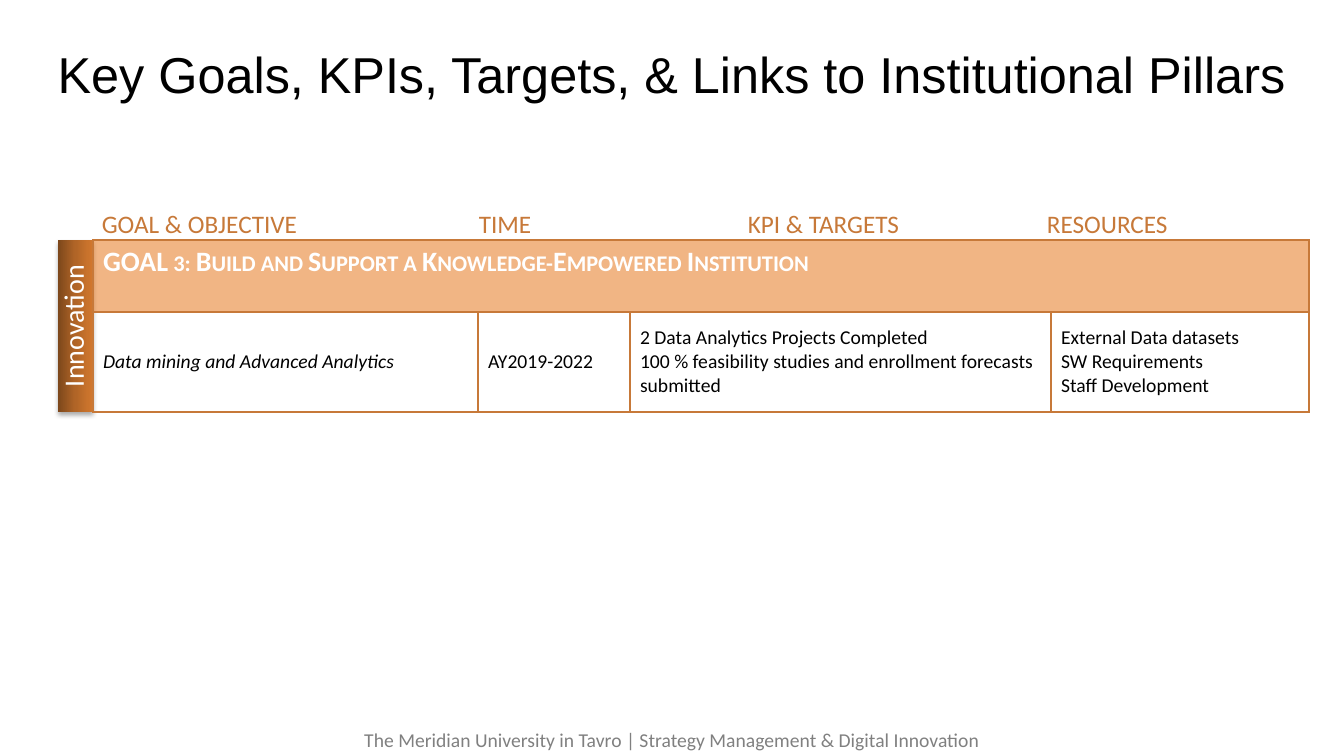
import pptx
import pptx.util
import pptx.dml.color
import pptx.enum.shapes
import pptx.enum.text
import pptx.oxml
import pptx.oxml.ns
from lxml import etree

RGB = pptx.dml.color.RGBColor
ALIGN = pptx.enum.text.PP_ALIGN
ANCHOR = pptx.enum.text.MSO_ANCHOR
Pt = pptx.util.Pt
qn = pptx.oxml.ns.qn

BLACK = RGB(0x00, 0x00, 0x00)
WHITE = RGB(0xFF, 0xFF, 0xFF)
GREY = RGB(0x80, 0x80, 0x80)
COPPER = RGB(0xC7, 0x79, 0x39)
ORANGE = RGB(0xE4, 0x6C, 0x0A)
PILLAR_STOPS = [(0, RGB(0x7C, 0x47, 0x1B)), (50, RGB(0xB1, 0x65, 0x27)),
                (100, RGB(0xD2, 0x78, 0x2E))]

TITLE = "Key Goals, KPIs, Targets, & Links to Institutional Pillars"
FOOTER = "The Meridian University in Tavro | Strategy Management & Digital Innovation"
PILLAR = "Innovation"
# heading and its distance from the first one, in px
HEADINGS = [("GOAL & OBJECTIVE", 0), ("TIME", 377),
            ("KPI & TARGETS", 646), ("RESOURCES", 945)]
GOAL = "GOAL 3: Build and Support a Knowledge-Empowered Institution"
OBJECTIVE = [
    ["Data mining and Advanced Analytics"],
    ["AY2019-2022"],
    ["2 Data Analytics Projects Completed",
     "100 % feasibility studies and enrollment forecasts submitted"],
    ["External Data datasets", "SW Requirements", "Staff Development"],
]

PX = 914400 / 100.8
SLIDE_W, SLIDE_H = 1344, 756
TABLE_LEFT, TABLE_TOP = 93, 240
COLUMNS = [385, 152, 421, 258]
ROWS = [72, 100]
PILLAR_W = 35


def px(length):
    return pptx.util.Emu(round(length * PX))


def box(*lengths):
    return [px(length) for length in lengths]


def write(frame, lines, size, colour, font="Calibri", align=ALIGN.LEFT,
          spacing=None, **style):
    frame.text = "\n".join(lines)
    for paragraph in frame.paragraphs:
        for name, value in {"alignment": align, "line_spacing": spacing}.items():
            setattr(paragraph, name, value)
        text_font = paragraph.runs[0].font
        for name, value in {"size": Pt(size), "name": font, **style}.items():
            setattr(text_font, name, value)
        text_font.color.rgb = colour


def add_text(slide, place, lines, *args, frame_format=None, **style):
    frame = slide.shapes.add_textbox(*box(*place)).text_frame
    for name, value in {"word_wrap": True, **(frame_format or {})}.items():
        setattr(frame, name, value)
    write(frame, lines, *args, **style)
    return frame


def add_headings(slide):
    line = "\t".join(heading for heading, _ in HEADINGS)
    frame = add_text(slide, (92, 203, 1217, 40), [line], 18, COPPER)
    tabs = etree.SubElement(frame.paragraphs[0]._p.get_or_add_pPr(), qn("a:tabLst"))
    for _, offset in HEADINGS[1:]:
        etree.SubElement(tabs, qn("a:tab"), pos=str(px(offset)), algn="l")


def add_colour(parent, colour, alpha=None):
    node = etree.SubElement(parent, qn("a:srgbClr"), val=str(colour))
    if alpha is not None:
        etree.SubElement(node, qn("a:alpha"), val=str(alpha * 1000))


def add_pillar(slide):
    """Upright bar along the left edge of the table."""
    length = sum(ROWS)
    left = TABLE_LEFT - PILLAR_W / 2 - length / 2
    top = TABLE_TOP + length / 2 - PILLAR_W / 2
    pillar = slide.shapes.add_shape(pptx.enum.shapes.MSO_SHAPE.RECTANGLE,
                                    *box(left, top, length, PILLAR_W))
    pillar.rotation = 270
    pillar.line.fill.background()
    pillar.fill.gradient()
    pillar.fill.gradient_angle = 270
    stops = pillar._element.spPr.find(".//" + qn("a:gsLst"))
    stops[:] = []
    for position, colour in PILLAR_STOPS:
        add_colour(etree.SubElement(stops, qn("a:gs"), pos=str(position * 1000)), colour)
    pillar.shadow.inherit = False
    shadow = etree.SubElement(
        pillar._element.spPr.find(qn("a:effectLst")), qn("a:outerShdw"),
        blurRad=str(Pt(3.5)), dist=str(Pt(2.2)), dir="5400000", rotWithShape="0")
    add_colour(shadow, BLACK, 32)
    pillar.text_frame.vertical_anchor = ANCHOR.MIDDLE
    write(pillar.text_frame, [PILLAR], 20, WHITE, align=ALIGN.CENTER, spacing=Pt(20))


def add_borders(cell):
    properties = cell._tc.get_or_add_tcPr()
    for index, side in enumerate(("a:lnL", "a:lnR", "a:lnT", "a:lnB")):
        line = etree.Element(qn(side), w=str(Pt(1)))
        add_colour(etree.SubElement(line, qn("a:solidFill")), COPPER)
        properties.insert(index, line)


def add_goal_table(slide):
    table = slide.shapes.add_table(
        len(ROWS), len(COLUMNS),
        *box(TABLE_LEFT, TABLE_TOP, sum(COLUMNS), sum(ROWS))).table
    table.first_row = table.horz_banding = False
    for column, width in zip(table.columns, COLUMNS):
        column.width = px(width)
    for row, height in zip(table.rows, ROWS):
        row.height = px(height)
    for cell in table.iter_cells():
        cell.fill.background()
        add_borders(cell)

    goal = table.cell(0, 0)
    goal.merge(table.cell(0, len(COLUMNS) - 1))
    goal.fill.solid()
    goal.fill.fore_color.rgb = ORANGE
    tint = goal._tc.tcPr.find(qn("a:solidFill") + "/" + qn("a:srgbClr"))
    etree.SubElement(tint, qn("a:alpha"), val="50000")
    write(goal.text_frame, [GOAL], 20, WHITE, bold=True)
    goal.text_frame.paragraphs[0].runs[0].font._element.set("cap", "small")

    for index, lines in enumerate(OBJECTIVE):
        cell = table.cell(1, index)
        cell.vertical_anchor = ANCHOR.MIDDLE
        write(cell.text_frame, lines, 14, BLACK, bold=False, italic=index == 0)


def main():
    deck = pptx.Presentation()
    deck.slide_width, deck.slide_height = box(SLIDE_W, SLIDE_H)
    slide = deck.slides.add_slide(deck.slide_layouts[6])
    add_text(slide, (0, 21, SLIDE_W, 113), [TITLE], 36, BLACK, font="Arial",
             align=ALIGN.CENTER, spacing=0.9,
             frame_format={"margin_left": 0, "margin_right": 0,
                           "vertical_anchor": ANCHOR.MIDDLE})
    add_pillar(slide)
    add_goal_table(slide)
    add_headings(slide)
    add_text(slide, (0, 723, SLIDE_W, 34), [FOOTER], 14, GREY, align=ALIGN.CENTER)
    deck.save("out.pptx")


if __name__ == "__main__":
    main()
